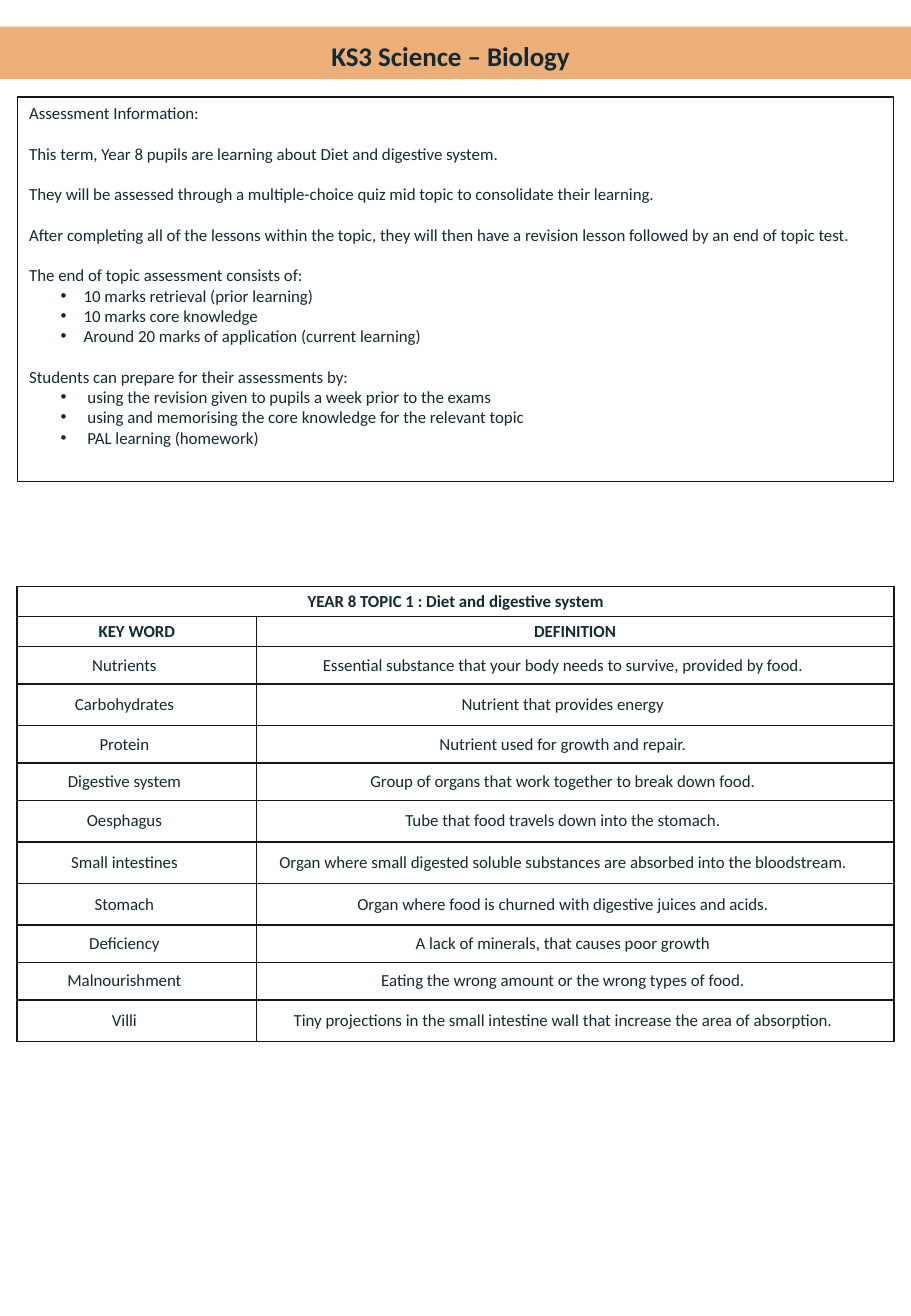
"""Build the Year 8 biology assessment and key word page."""
from dataclasses import dataclass

from lxml.etree import SubElement
from pptx import Presentation
from pptx.dml.color import RGBColor
from pptx.enum.shapes import MSO_SHAPE
from pptx.enum.text import MSO_ANCHOR as Anchor, PP_ALIGN as Align
from pptx.oxml.ns import qn
from pptx.shapes.autoshape import Shape
from pptx.slide import Slide
from pptx.table import _Cell as Cell
from pptx.text.text import _Paragraph as Paragraph
from pptx.util import Cm, Pt


@dataclass(frozen=True)
class Theme:
    ink: RGBColor = RGBColor(0x14, 0x2A, 0x33)
    rule: RGBColor = RGBColor(0x18, 0x17, 0x17)
    band: RGBColor = RGBColor(0xED, 0xAF, 0x77)
    font: str = "Calibri"
    title_size: Pt = Pt(16)
    body_size: Pt = Pt(10)
    gap: Pt = Pt(12)
    box_line: Pt = Pt(0.75)
    table_line: Pt = Pt(1)


@dataclass(frozen=True)
class Line:
    text: str
    bullet_indent: float = 0
    gap_before: bool = True


@dataclass(frozen=True)
class Entry:
    word: str
    definition: str
    height: float
    heading: bool = False


THEME = Theme()
PAGE_WIDTH, PAGE_HEIGHT = 19.05, 27.51
MARGIN = 0.36
CONTENT_WIDTH = PAGE_WIDTH - 2 * MARGIN
WORD_WIDTH = 5.0
BULLET_START = 0.66
HEADING, SHORT, TALL = 0.63, 0.78, 0.87

INFORMATION = (
    Line("Assessment Information:", gap_before=False),
    Line("This term, Year 8 pupils are learning about Diet and digestive system."),
    Line("They will be assessed through a multiple-choice quiz mid topic to consolidate their learning."),
    Line("After completing all of the lessons within the topic, they will then have a revision lesson "
         "followed by an end of topic test."),
    Line("The end of topic assessment consists of:"),
    Line("10 marks retrieval (prior learning)", 1.14, False),
    Line("10 marks core knowledge", 1.14, False),
    Line("Around 20 marks of application (current learning)", 1.14, False),
    Line("Students can prepare for their assessments by:"),
    Line("using the revision given to pupils a week prior to the exams", 1.22, False),
    Line("using and memorising the core knowledge for the relevant topic", 1.22, False),
    Line("PAL learning (homework)", 1.22, False),
)
ENTRIES = (
    Entry("YEAR 8 TOPIC 1 : Diet and digestive system", "", HEADING, True),
    Entry("KEY WORD", "DEFINITION", HEADING, True),
    Entry("Nutrients", "Essential substance that your body needs to survive, provided by food.", SHORT),
    Entry("Carbohydrates", "Nutrient that provides energy", TALL),
    Entry("Protein", "Nutrient used for growth and repair.", SHORT),
    Entry("Digestive system", "Group of organs that work together to break down food.", SHORT),
    Entry("Oesphagus", "Tube that food travels down into the stomach.", TALL),
    Entry("Small intestines",
          "Organ where small digested soluble substances are absorbed into the bloodstream.", TALL),
    Entry("Stomach", "Organ where food is churned with digestive juices and acids.", TALL),
    Entry("Deficiency", "A lack of minerals, that causes poor growth", SHORT),
    Entry("Malnourishment", "Eating the wrong amount or the wrong types of food.", SHORT),
    Entry("Villi", "Tiny projections in the small intestine wall that increase the area of absorption.", TALL),
)


def add_span(para: Paragraph, text: str, size: Pt = THEME.body_size, bold: bool = False) -> None:
    span = para.add_run()
    span.text = text
    span.font.name = THEME.font
    span.font.size = size
    span.font.bold = bold
    span.font.color.rgb = THEME.ink


def add_box(page: Slide, left: float, top: float, width: float, height: float) -> Shape:
    box = page.shapes.add_shape(MSO_SHAPE.RECTANGLE, Cm(left), Cm(top), Cm(width), Cm(height))
    box.shadow.inherit = False
    box.text_frame.word_wrap = True
    return box


def add_title(page: Slide) -> None:
    band = add_box(page, 0, 0.56, PAGE_WIDTH, 1.09)
    band.fill.solid()
    band.fill.fore_color.rgb = THEME.band
    band.line.fill.background()
    frame = band.text_frame
    frame.vertical_anchor = Anchor.MIDDLE
    frame.margin_top, frame.margin_bottom = Cm(0.12), Cm(0)
    frame.margin_left, frame.margin_right = Cm(0.25), Cm(0.45)
    para = frame.paragraphs[0]
    para.alignment = Align.CENTER
    add_span(para, "KS3 Science – Biology", THEME.title_size, True)


def add_bullet(para: Paragraph, indent: float) -> None:
    para.level = 1
    properties = para._p.get_or_add_pPr()
    properties.set("marL", str(Cm(indent)))
    properties.set("indent", str(Cm(BULLET_START - indent)))
    SubElement(properties, qn("a:buFont"), typeface="Arial")
    SubElement(properties, qn("a:buChar"), char="•")


def add_information(page: Slide) -> None:
    box = add_box(page, MARGIN, 2.03, CONTENT_WIDTH, 8.03)
    box.fill.background()
    box.line.color.rgb = THEME.rule
    box.line.width = THEME.box_line
    frame = box.text_frame
    frame.vertical_anchor = Anchor.TOP
    for index, line in enumerate(INFORMATION):
        para = frame.add_paragraph() if index else frame.paragraphs[0]
        para.alignment = Align.LEFT
        if line.gap_before:
            para.space_before = THEME.gap
        if line.bullet_indent:
            add_bullet(para, line.bullet_indent)
        add_span(para, line.text)


def add_borders(cell: Cell) -> None:
    properties = cell._tc.get_or_add_tcPr()
    for side in ("lnL", "lnR", "lnT", "lnB"):
        border = SubElement(properties, qn(f"a:{side}"), w=str(THEME.table_line))
        fill = SubElement(border, qn("a:solidFill"))
        SubElement(fill, qn("a:srgbClr"), val=str(THEME.rule))


def fill_cell(cell: Cell, text: str, heading: bool) -> None:
    add_borders(cell)
    cell.fill.background()
    cell.vertical_anchor = Anchor.MIDDLE
    cell.margin_left = Cm(0.2 if heading else 0.18)
    cell.margin_right = Cm(0.2 if heading else 0.7)
    cell.margin_top = cell.margin_bottom = Cm(0.1 if heading else 0)
    para = cell.text_frame.paragraphs[0]
    para.alignment = Align.CENTER
    para.font.size = THEME.body_size
    if text:
        add_span(para, text, bold=heading)


def add_key_words(page: Slide) -> None:
    height = sum(entry.height for entry in ENTRIES)
    table = page.shapes.add_table(
        len(ENTRIES), 2, Cm(MARGIN), Cm(12.26), Cm(CONTENT_WIDTH), Cm(height)).table
    table.first_row = table.horz_banding = False
    table.columns[0].width = Cm(WORD_WIDTH)
    table.columns[1].width = Cm(CONTENT_WIDTH - WORD_WIDTH)
    for index, entry in enumerate(ENTRIES):
        table.rows[index].height = Cm(entry.height)
        for column, text in enumerate((entry.word, entry.definition)):
            fill_cell(table.cell(index, column), text, entry.heading)
    table.cell(0, 0).merge(table.cell(0, 1))


def main() -> None:
    deck = Presentation()
    deck.slide_width, deck.slide_height = Cm(PAGE_WIDTH), Cm(PAGE_HEIGHT)
    page = deck.slides.add_slide(deck.slide_layouts[6])
    add_key_words(page)
    add_information(page)
    add_title(page)
    deck.save("out.pptx")


if __name__ == "__main__":
    main()
